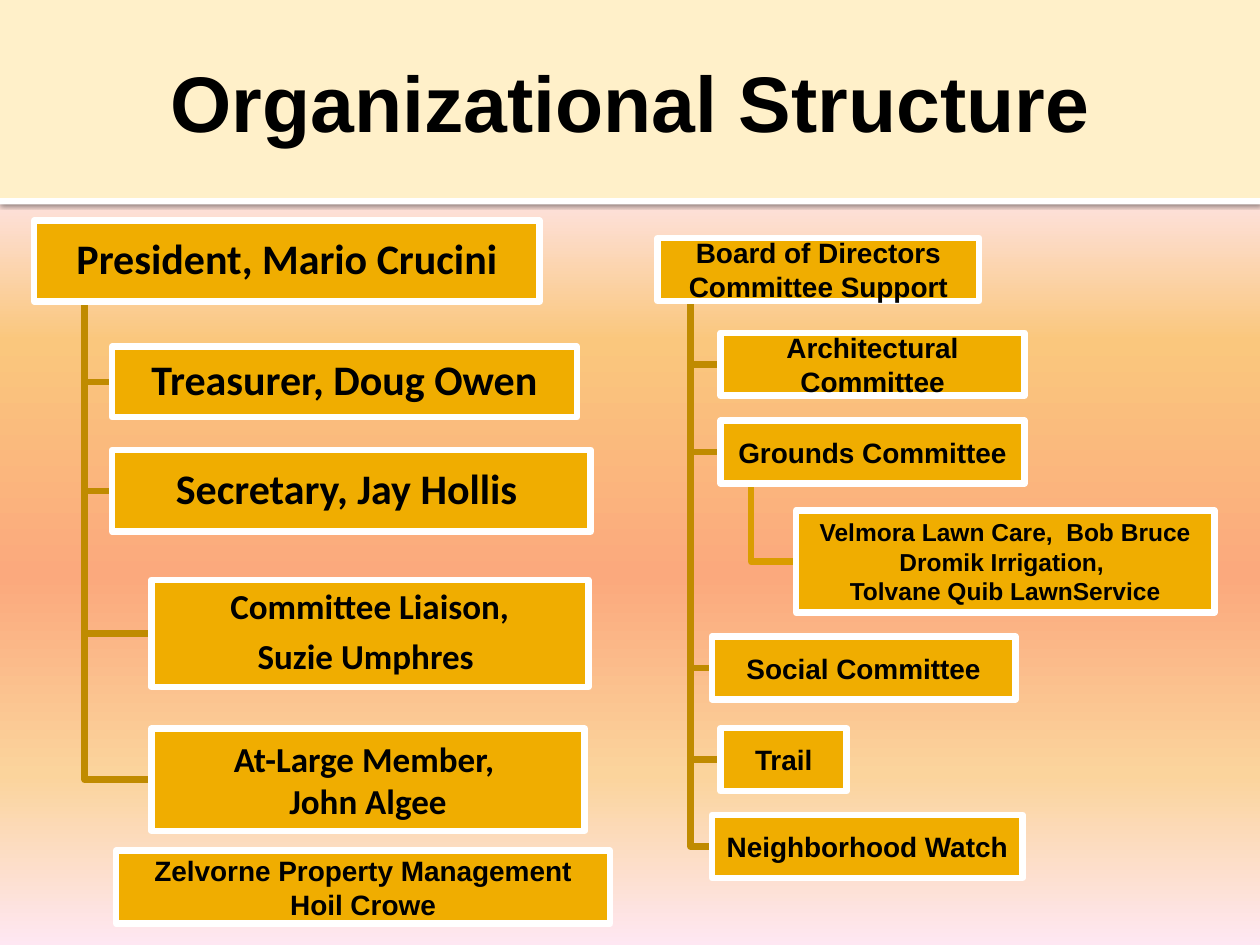
from lxml.etree import SubElement
from pptx import Presentation
from pptx.dml.color import RGBColor
from pptx.enum.shapes import MSO_SHAPE
from pptx.enum.text import MSO_ANCHOR, PP_ALIGN
from pptx.oxml.ns import qn
from pptx.util import Cm, Pt

HUES = {"gold": "F0AD00", "dark": "C08B00", "amber": "DA9D00",
        "white": "FFFFFF", "black": "000000", "cream": "FFF0C9"}
SKY = [(0, "FBEAC7"), (18, "FEE7F2"), (36, "FAC77D"),
       (61, "FBA97D"), (82, "FBD49C"), (100, "FEE7F2")]
WIDE, HIGH = 25.4, 19.05
EDGE = 3.78


def hue(name):
    return RGBColor.from_string(HUES[name])


def node(text, x, y, w, h=1.27, size=16, font="Arial", loose=False,
         stem=0, line="dark", kids=()):
    return dict(text=text, x=x, y=y, w=w, h=h, size=size, font=font,
                loose=loose, stem=stem, line=line, kids=kids)


OFFICERS = node("President, Mario Crucini", 0, 0, 10.19, 1.63, 24, "Calibri", True, 1.02, kids=[
    node("Treasurer, Doug Owen", 1.57, 2.54, 9.37, 1.42, 24, "Calibri", True),
    node("Secretary, Jay Hollis ", 1.57, 4.62, 9.65, 1.65, 24, "Calibri", True),
    node("Committee Liaison,\nSuzie Umphres ", 2.36, 7.24, 8.81, 2.16, 20, "Calibri", True),
    node("At-Large Member, \nJohn Algee", 2.36, 10.24, 8.74, 2.06, 20, "Calibri"),
])
SUPPORT = node("Board of Directors\nCommittee Support", 0, 0, 6.48, stem=0.66, kids=[
    node("Architectural Committee", 1.27, 1.91, 6.12),
    node("Grounds Committee", 1.27, 3.68, 6.12, stem=0.61, line="amber", kids=[
        node("Velmora Lawn Care,  Bob Bruce\nDromik Irrigation, \nTolvane Quib LawnService",
             2.79, 5.49, 8.43, 2.06, 14),
    ]),
    node("Social Committee", 1.09, 8.03, 6.12),
    node("Trail", 1.27, 9.88, 2.54),
    node("Neighborhood Watch", 1.09, 11.63, 6.27),
])
MANAGER = node("Zelvorne Property Management\nHoil Crowe", 0, 0, 9.96, 1.47)


def paint(slide):
    fill = slide.background.fill
    fill.gradient()
    grad = slide._element.find(".//" + qn("a:gradFill"))
    stops = grad.find(qn("a:gsLst"))
    for stop in list(stops):
        stops.remove(stop)
    for pos, code in SKY:
        stop = SubElement(stops, qn("a:gs"), pos=str(pos * 1000))
        SubElement(stop, qn("a:srgbClr"), val=code)
    grad.find(qn("a:lin")).set("ang", "5400000")


def rect(slide, x, y, w, h, fill):
    shape = slide.shapes.add_shape(MSO_SHAPE.RECTANGLE, Cm(x), Cm(y), Cm(w), Cm(h))
    shape.shadow.inherit = False
    shape.fill.solid()
    shape.fill.fore_color.rgb = hue(fill)
    shape.line.fill.background()
    return shape


def style(para, size, font):
    para.alignment = PP_ALIGN.CENTER
    for run in para.runs:
        run.font.size = Pt(size)
        run.font.name = font
        run.font.bold = True
        run.font.color.rgb = hue("black")


def header(slide, x, y, w, h):
    bar = rect(slide, x, y + h, w, 0.13, "white")
    glow = SubElement(bar._element.spPr.find(qn("a:effectLst")), qn("a:outerShdw"),
                      blurRad=str(Pt(2.5)), dist=str(Pt(0.8)), dir="5400000", rotWithShape="0")
    tint = SubElement(glow, qn("a:srgbClr"), val=HUES["black"])
    SubElement(tint, qn("a:alpha"), val="60000")
    rect(slide, x, y, w, h, "cream")

    title = slide.shapes.title
    title.left, title.top = Cm(x), Cm(y + 0.84)
    title.width, title.height = Cm(w), Cm(2.18)
    frame = title.text_frame
    frame.text = "Organizational Structure"
    frame.vertical_anchor = MSO_ANCHOR.TOP
    frame.margin_top = Cm(0.25)
    style(frame.paragraphs[0], 45, "Arial")
    slide.shapes._spTree.append(title._element)


def link(slide, x, y, item, kid):
    left = x + item["x"] + item["stem"]
    top = y + item["y"] + item["h"]
    right = x + kid["x"]
    low = y + kid["y"] + kid["h"] / 2
    pen = slide.shapes.build_freeform(Cm(left), Cm(top))
    pen.add_line_segments([(Cm(left), Cm(low)), (Cm(right), Cm(low))], close=False)
    elbow = pen.convert_to_shape()
    elbow.shadow.inherit = False
    elbow.fill.background()
    elbow.line.color.rgb = hue(item["line"])
    elbow.line.width = Pt(EDGE)


def card(slide, x, y, item):
    box = rect(slide, x + item["x"], y + item["y"], item["w"], item["h"], "gold")
    box.line.color.rgb = hue("white")
    box.line.width = Pt(EDGE)
    frame = box.text_frame
    frame.text = item["text"]
    frame.word_wrap = True
    frame.vertical_anchor = MSO_ANCHOR.MIDDLE
    frame.margin_left = frame.margin_right = Cm(0.04)
    frame.margin_top = frame.margin_bottom = Cm(0.04)
    for para in frame.paragraphs:
        style(para, item["size"], item["font"])
        if item["loose"]:
            para.line_spacing = 0.9
            para.space_after = Pt(item["size"] * 0.35)


def tree(slide, x, y, item):
    for kid in reversed(item["kids"]):
        link(slide, x, y, item, kid)
    card(slide, x, y, item)
    for kid in item["kids"]:
        tree(slide, x, y, kid)


def main():
    deck = Presentation()
    deck.slide_width, deck.slide_height = Cm(WIDE), Cm(HIGH)
    slide = deck.slides.add_slide(deck.slide_layouts[5])
    paint(slide)
    header(slide, 0, 0, WIDE, 3.99)
    tree(slide, 13.26, 4.8, SUPPORT)
    tree(slide, 2.34, 17.15, MANAGER)
    tree(slide, 0.69, 4.45, OFFICERS)
    deck.save("out.pptx")


if __name__ == "__main__":
    main()
